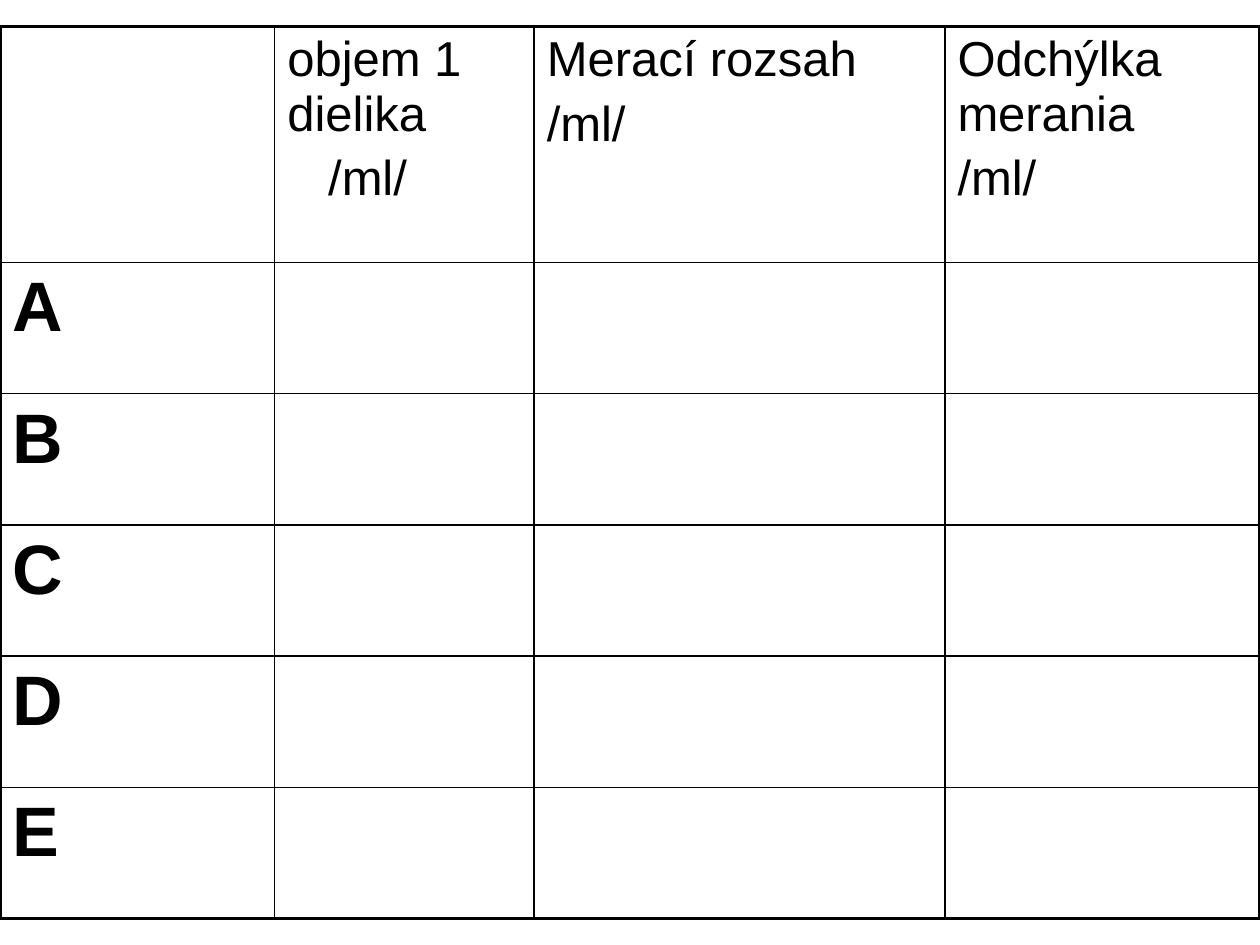
from lxml.etree import SubElement
from pptx import Presentation
from pptx.dml.color import RGBColor
from pptx.oxml.ns import qn
from pptx.util import Pt

INK = "000000"
HEADERS = [
    [],
    ["objem 1 dielika", "/ml/"],
    ["Merací rozsah", "/ml/"],
    ["Odchýlka merania", "/ml/"],
]
ROW_NAMES = "ABCDE"
COL_WIDTHS = [157, 148.3, 234.7, 180]
HEADER_SHARE = 135 / 510
UNIT_INDENT = 23.35


def rgb(value):
    """Return a colour from a hex string."""
    return RGBColor.from_string(value)


def set_borders(cell, widths):
    """Draw the left, right, top and bottom borders of a cell."""
    tcPr = cell._tc.get_or_add_tcPr()
    for tag, width in zip(("a:lnL", "a:lnR", "a:lnT", "a:lnB"), widths):
        ln = SubElement(tcPr, qn(tag), w=str(Pt(width)))
        fill = SubElement(ln, qn("a:solidFill"))
        SubElement(fill, qn("a:srgbClr"), val=INK)


def set_text(cell, lines, size, bold=False):
    """Write one paragraph per line, spaced by a fifth of the text size."""
    tf = cell.text_frame
    tf.text = "\n".join(lines)
    for i, p in enumerate(tf.paragraphs):
        if i:
            p.space_before = Pt(size * 0.2)
        for r in p.runs:
            r.font.name = "Arial"
            r.font.size = Pt(size)
            r.font.bold = bold
            r.font.color.rgb = rgb(INK)


def add_measurement_table(slide, left, top, width, height):
    """Place the measurement table in the given box."""
    n_rows, n_cols = len(ROW_NAMES) + 1, len(HEADERS)
    table = slide.shapes.add_table(
        n_rows, n_cols, Pt(left), Pt(top), Pt(width), Pt(height)).table
    table.first_row = table.horz_banding = False
    for col, share in zip(table.columns, COL_WIDTHS):
        col.width = Pt(width * share / sum(COL_WIDTHS))
    header_height = height * HEADER_SHARE
    for i, row in enumerate(table.rows):
        row.height = Pt((height - header_height) / len(ROW_NAMES) if i else header_height)
        for j, cell in enumerate(row.cells):
            outer = (j == 0, j == n_cols - 1, i == 0, i == n_rows - 1)
            set_borders(cell, [2.25 if edge else 1 for edge in outer])
            cell.fill.background()
    for j, lines in enumerate(HEADERS):
        if lines:
            set_text(table.cell(0, j), lines, 28)
    unit = table.cell(0, 1).text_frame.paragraphs[1]
    unit._p.get_or_add_pPr().set("marL", str(Pt(UNIT_INDENT)))
    for i, name in enumerate(ROW_NAMES, 1):
        set_text(table.cell(i, 0), [name], 40, bold=True)


def main():
    """Build the slide and save it."""
    prs = Presentation()
    prs.slide_width, prs.slide_height = Pt(720), Pt(540)
    slide = prs.slides.add_slide(prs.slide_layouts[6])
    add_measurement_table(slide, 0, 15, 720, 510)
    prs.save("out.pptx")


if __name__ == "__main__":
    main()
